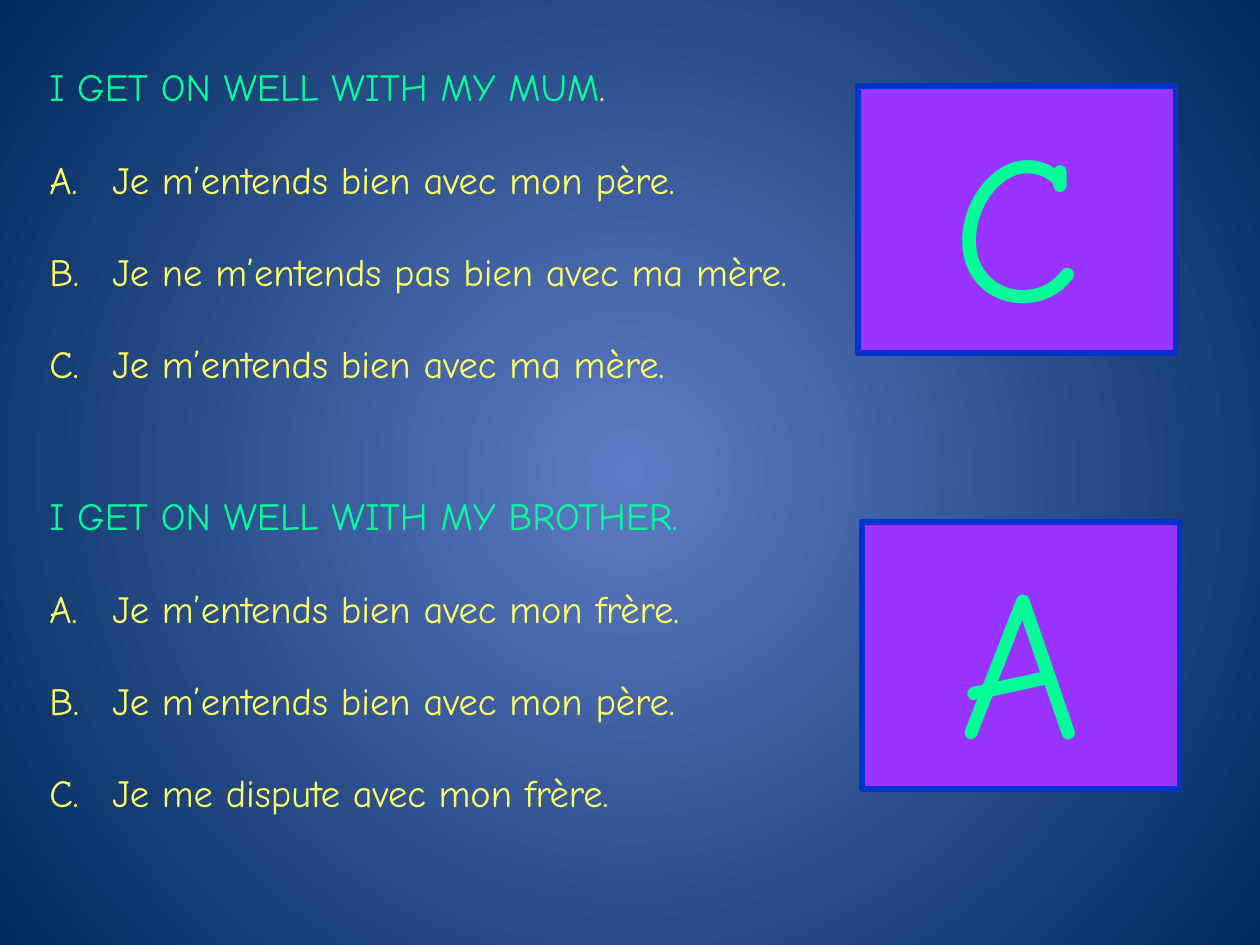
from lxml import etree
from pptx import Presentation
from pptx.dml.color import RGBColor
from pptx.enum.shapes import MSO_SHAPE
from pptx.enum.text import MSO_ANCHOR, PP_ALIGN
from pptx.oxml.ns import qn
from pptx.util import Pt

RECTANGLE = MSO_SHAPE.RECTANGLE
CENTER = PP_ALIGN.CENTER
TOP = MSO_ANCHOR.TOP
PX = 914400 // 126
FONT = "Comic Neue"
GREEN = RGBColor(0x00, 0xFF, 0x99)
YELLOW = RGBColor(0xFF, 0xFF, 0x66)
PURPLE = RGBColor(0x99, 0x33, 0xFF)
BORDER_BLUE = RGBColor(0x00, 0x33, 0xCC)
CENTER_BLUE = RGBColor(0x5E, 0x7C, 0xC5)
EDGE_BLUE = RGBColor(0x00, 0x29, 0x5C)

QUESTIONS = [
    ([("I GET ON WELL WITH MY MUM", GREEN), (".", YELLOW)],
     ["Je m’entends bien avec mon père.",
      "Je ne m’entends pas bien avec ma mère.",
      "Je m’entends bien avec ma mère."],
     "C", (37, 57, 820, 386), (858, 86, 318, 267)),
    ([("I GET ON WELL WITH MY BROTHER.", GREEN)],
     ["Je m’entends bien avec mon frère.",
      "Je m’entends bien avec mon père.",
      "Je me dispute avec mon frère."],
     "A", (37, 486, 862, 386), (862, 522, 318, 267)),
]


def add_run(paragraph, text, size, color):
    run = paragraph.add_run()
    run.text = text
    run.font.name = FONT
    run.font.size = Pt(size)
    run.font.color.rgb = color


prs = Presentation()
prs.slide_width = 1260 * PX
prs.slide_height = 945 * PX
slide = prs.slides.add_slide(prs.slide_layouts[6])

backdrop = slide.background.fill
backdrop.gradient()
for stop, color, position in zip(backdrop.gradient_stops, (CENTER_BLUE, EDGE_BLUE), (0, 1)):
    stop.color.rgb = color
    stop.position = position
gradient = next(slide.element.iter(qn("a:gradFill")))
gradient.remove(gradient.find(qn("a:lin")))
radial = etree.SubElement(gradient, qn("a:path"), path="circle")
etree.SubElement(radial, qn("a:fillToRect"), l="50000", t="50000", r="50000", b="50000")

for prompt, options, letter, question_area, answer_area in QUESTIONS:
    question = slide.shapes.add_textbox(*(n * PX for n in question_area)).text_frame
    question.word_wrap = True
    heading = question.paragraphs[0]
    for text, color in prompt:
        add_run(heading, text, 22, color)
    for option in options:
        choice = question.add_paragraph()
        choice.space_before = Pt(26.4)
        add_run(choice, option, 22, YELLOW)
        properties = choice._p.get_or_add_pPr()
        properties.set("marL", str(63 * PX))
        properties.set("indent", str(-63 * PX))
        etree.SubElement(properties, qn("a:buFont"), typeface="+mj-lt")
        etree.SubElement(properties, qn("a:buAutoNum"), type="alphaUcPeriod")

    answer = slide.shapes.add_shape(RECTANGLE, *(n * PX for n in answer_area))
    answer.shadow.inherit = False
    answer.fill.solid()
    answer.fill.fore_color.rgb = PURPLE
    answer.line.color.rgb = BORDER_BLUE
    answer.line.width = Pt(3)
    etree.SubElement(answer.line._get_or_add_ln(), qn("a:round"))
    answer.text_frame.word_wrap = True
    answer.text_frame.vertical_anchor = TOP
    answer_line = answer.text_frame.paragraphs[0]
    answer_line.alignment = CENTER
    add_run(answer_line, letter, 120, GREEN)

prs.save("out.pptx")
